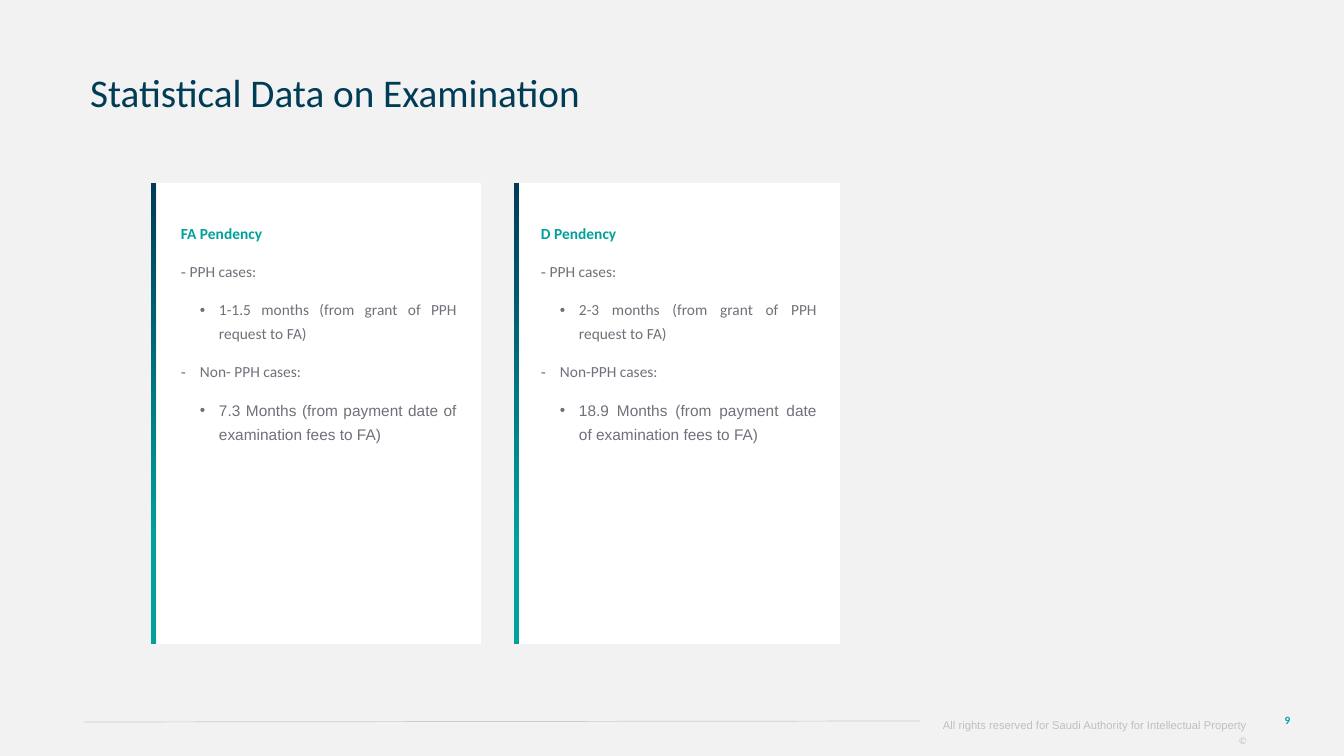
from lxml import etree
from pptx import Presentation
from pptx.dml.color import RGBColor
from pptx.enum.shapes import MSO_CONNECTOR as CONN, MSO_SHAPE as SHAPE
from pptx.enum.text import MSO_ANCHOR as ANCHOR, MSO_AUTO_SIZE as AUTO, PP_ALIGN as ALIGN
from pptx.oxml.ns import qn
from pptx.util import Emu, Pt

PX = 9071  # EMU per px
TEAL, NAVY, GREY = "00A19B", "003C56", "6E7179"


def color(target, value):
    target.rgb = RGBColor.from_string(value)


def add_run(p, text, size, value, font="Calibri", bold=False):
    r = p.add_run()
    r.text = text
    r.font.name, r.font.size, r.font.bold = font, Pt(size), bold
    color(r.font.color, value)


prs = Presentation()
prs.slide_width, prs.slide_height = Emu(1344 * PX), Emu(756 * PX)
s = prs.slides.add_slide(prs.slide_layouts[5])
s.background.fill.solid()
color(s.background.fill.fore_color, "F2F2F2")

# Title
title = s.shapes.title
title.left, title.top, title.width, title.height = [Emu(v * PX) for v in (90, 56, 906, 95)]
tf = title.text_frame
tf.auto_size, tf.vertical_anchor = AUTO.NONE, ANCHOR.TOP
tf.margin_left = tf.margin_right = tf.margin_bottom = 0
tf.margin_top = Emu(21 * PX)
p = tf.paragraphs[0]
p.alignment, p.line_spacing = ALIGN.LEFT, 0.8
add_run(p, "Statistical Data on Examination", 28, NAVY)

# Cards: card left, bar left, text left, then the wording
cards = [
    (157, 151, 181, "FA Pendency", "1-1.5 months (from grant of PPH request to FA)",
     "Non- PPH cases:", "7.3 Months (from payment date of examination fees to FA)"),
    (516, 514, 541, "D Pendency", "2-3 months (from grant of PPH request to FA)",
     "Non-PPH cases:", "18.9 Months (from payment date of examination fees to FA)"),
]
for card_x, bar_x, text_x, heading, pph, non_pph_label, non_pph in cards:
    card = s.shapes.add_shape(SHAPE.RECTANGLE, card_x * PX, 183 * PX, 324 * PX, 461 * PX)
    card.fill.solid()
    color(card.fill.fore_color, "FFFFFF")

    bar = s.shapes.add_shape(SHAPE.RECTANGLE, bar_x * PX, 183 * PX, 5 * PX, 461 * PX)
    bar.fill.gradient()
    bar.fill.gradient_angle = 90
    for stop, position, value in zip(bar.fill.gradient_stops, (0.22, 1), (TEAL, NAVY)):
        stop.position = position
        color(stop.color, value)

    for shape in (card, bar):
        shape.line.fill.background()
        shape.shadow.inherit = False

    tf = s.shapes.add_textbox(text_x * PX, 215 * PX, 276 * PX, 270 * PX).text_frame
    tf.word_wrap = True
    tf.margin_left = tf.margin_right = 0
    tf.margin_top = tf.margin_bottom = Emu(4 * PX)
    lines = [  # bullet, level, runs of (text, colour, font, bold)
        (None, 0, [(heading, TEAL, "Calibri", True)]),
        (None, 0, [("-", GREY, "Arial", False), (" PPH cases:", GREY, "Calibri", False)]),
        ("•", 1, [(pph, GREY, "Calibri", False)]),
        ("-", 0, [(non_pph_label, GREY, "Calibri", False)]),
        ("•", 1, [(non_pph, GREY, "Arial", False)]),
    ]
    for i, (bullet, level, runs) in enumerate(lines):
        p = tf.add_paragraph() if i else tf.paragraphs[0]
        p.level, p.alignment, p.line_spacing = level, ALIGN.JUSTIFY, 1.3
        if i:
            p.space_before = Pt(10)
        if bullet:
            pPr = p._p.get_or_add_pPr()
            pPr.set("marL", str(19 * (level + 1) * PX))
            pPr.set("indent", str(-19 * PX))
            etree.SubElement(pPr, qn("a:buFont")).set("typeface", "Arial")
            etree.SubElement(pPr, qn("a:buChar")).set("char", bullet)
        for text, value, font, bold in runs:
            add_run(p, text, 11, value, font, bold)

# Footer
rule = s.shapes.add_connector(CONN.STRAIGHT, 84 * PX, 722 * PX, 920 * PX, 721 * PX)
rule.line.width = Pt(0.5)
color(rule.line.color, "CDCDCD")
etree.SubElement(rule._element.spPr, qn("a:effectLst"))

tf = s.shapes.add_textbox(931 * PX, 710 * PX, 340 * PX, 39 * PX).text_frame
tf.word_wrap = True
tf.margin_left, tf.margin_right = 0, Emu(24 * PX)
tf.margin_top = tf.margin_bottom = Emu(4 * PX)
p = tf.paragraphs[0]
p.alignment, p.line_spacing = ALIGN.RIGHT, 1.3
add_run(p, "All rights reserved for Saudi Authority for Intellectual Property", 8, "BFBFBF", "Arial")
p.add_line_break()
add_run(p, "©", 7, "BFBFBF")

tf = s.shapes.add_textbox(1232 * PX, 700 * PX, 111 * PX, 40 * PX).text_frame
tf.word_wrap, tf.vertical_anchor = True, ANCHOR.MIDDLE
p = tf.paragraphs[0]
p.alignment = ALIGN.CENTER
add_run(p, "9", 8, TEAL, bold=True)

prs.save("out.pptx")
